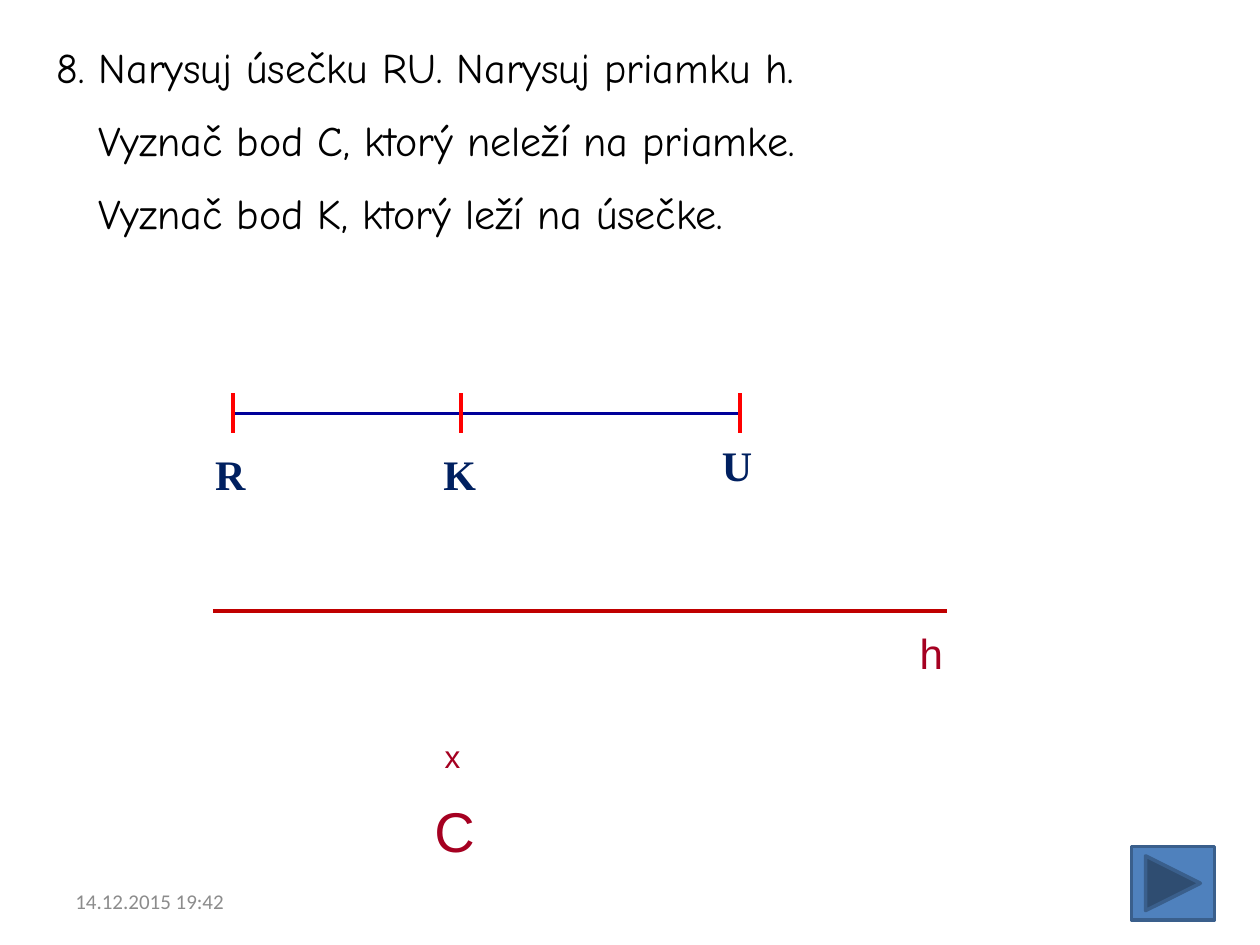
from dataclasses import dataclass

from lxml import etree
from pptx import Presentation
from pptx.dml.color import RGBColor as Color
from pptx.enum.shapes import MSO_CONNECTOR as Connector, MSO_SHAPE as Shape
from pptx.enum.text import MSO_ANCHOR as Anchor, MSO_AUTO_SIZE as AutoSize, PP_ALIGN as Align
from pptx.oxml.ns import qn
from pptx.util import Inches, Pt


@dataclass(frozen=True)
class Theme:
    ink: str = "000000"
    point: str = "002060"
    tick: str = "FF0000"
    segment: str = "000099"
    line: str = "C00000"
    letter: str = "A50021"
    date: str = "8C8C8C"
    button: str = "4F81BD"
    button_edge: str = "3A5F8C"
    large: int = 32
    text: int = 24
    mark: int = 18
    small: int = 12


theme = Theme()
deck = Presentation()
deck.slide_width, deck.slide_height = Inches(10), Inches(7.5)
page = deck.slides.add_slide(deck.slide_layouts[5])


def add_line(x1, y1, x2, y2, color, width):
    line = page.shapes.add_connector(
        Connector.STRAIGHT, Inches(x1), Inches(y1), Inches(x2), Inches(y2))
    line.line.color.rgb = Color.from_string(color)
    line.line.width = Pt(width)
    etree.SubElement(line._element.spPr, qn("a:effectLst"))


def add_text(text, place, font, size, color, bold=False, wrap=True):
    box = page.shapes.add_textbox(*map(Inches, place))
    frame = box.text_frame
    frame.word_wrap = wrap
    para = frame.paragraphs[0]
    para.text = text
    para.font.name, para.font.size, para.font.bold = font, Pt(size), bold
    para.font.color.rgb = Color.from_string(color)
    return frame


# Task
task = page.shapes.title
task.left, task.top, task.width, task.height = map(Inches, (0.35, 0.28, 9.06, 1.72))
frame = task.text_frame
frame.text = "\n".join([
    "8. Narysuj úsečku RU. Narysuj priamku h.",
    "Vyznač bod C, ktorý neleží na priamke.",
    "Vyznač bod K, ktorý leží na úsečke.",
])
frame.word_wrap = True
frame.auto_size = AutoSize.NONE
frame.vertical_anchor = Anchor.TOP
for number, para in enumerate(frame.paragraphs):
    para.alignment = Align.LEFT
    para.space_before = Pt(13)
    para.font.name, para.font.size = "Comic Neue", Pt(theme.text)
    para.font.color.rgb = Color.from_string(theme.ink)
    if number > 0:  # later lines align with the text after the number
        para._p.get_or_add_pPr().set("marL", str(Inches(0.33)))

# Segment RU with its points
segment_y, half_tick = 3.28, 0.16
points = [("R", 1.85, 3.51), ("K", 3.66, 3.51), ("U", 5.87, 3.44)]
add_line(points[0][1], segment_y, points[-1][1], segment_y, theme.segment, 2)
for name, x, label_top in points:
    add_line(x, segment_y - half_tick, x, segment_y + half_tick, theme.tick, 2.25)
    add_text(name, (x - 0.24, label_top, 0.71, 0.5), "Times New Roman",
             theme.text, theme.point, bold=True)

# Line h and point C
add_line(1.69, 4.85, 7.52, 4.85, theme.line, 2.25)
for name, place, size in [
    ("h", (7.2, 4.93, 0.39, 0.5), theme.text),
    ("x", (3.43, 5.8, 0.33, 0.4), theme.mark),
    ("C", (3.35, 6.27, 0.53, 0.64), theme.large),
]:
    add_text(name, place, "Arial", size, theme.letter, wrap=False)

# Next button
button = page.shapes.add_shape(Shape.ACTION_BUTTON_FORWARD_OR_NEXT, Inches(8.98),
                               Inches(6.72), Inches(0.66), Inches(0.58))
button.shadow.inherit = False
button.fill.solid()
button.fill.fore_color.rgb = Color.from_string(theme.button)
button.line.color.rgb = Color.from_string(theme.button_edge)
button.line.width = Pt(2)

# Date
date = add_text("14.12.2015 19:42", (0.5, 6.95, 2.33, 0.4), "Calibri",
                theme.small, theme.date)
date.vertical_anchor = Anchor.MIDDLE

deck.save("out.pptx")
